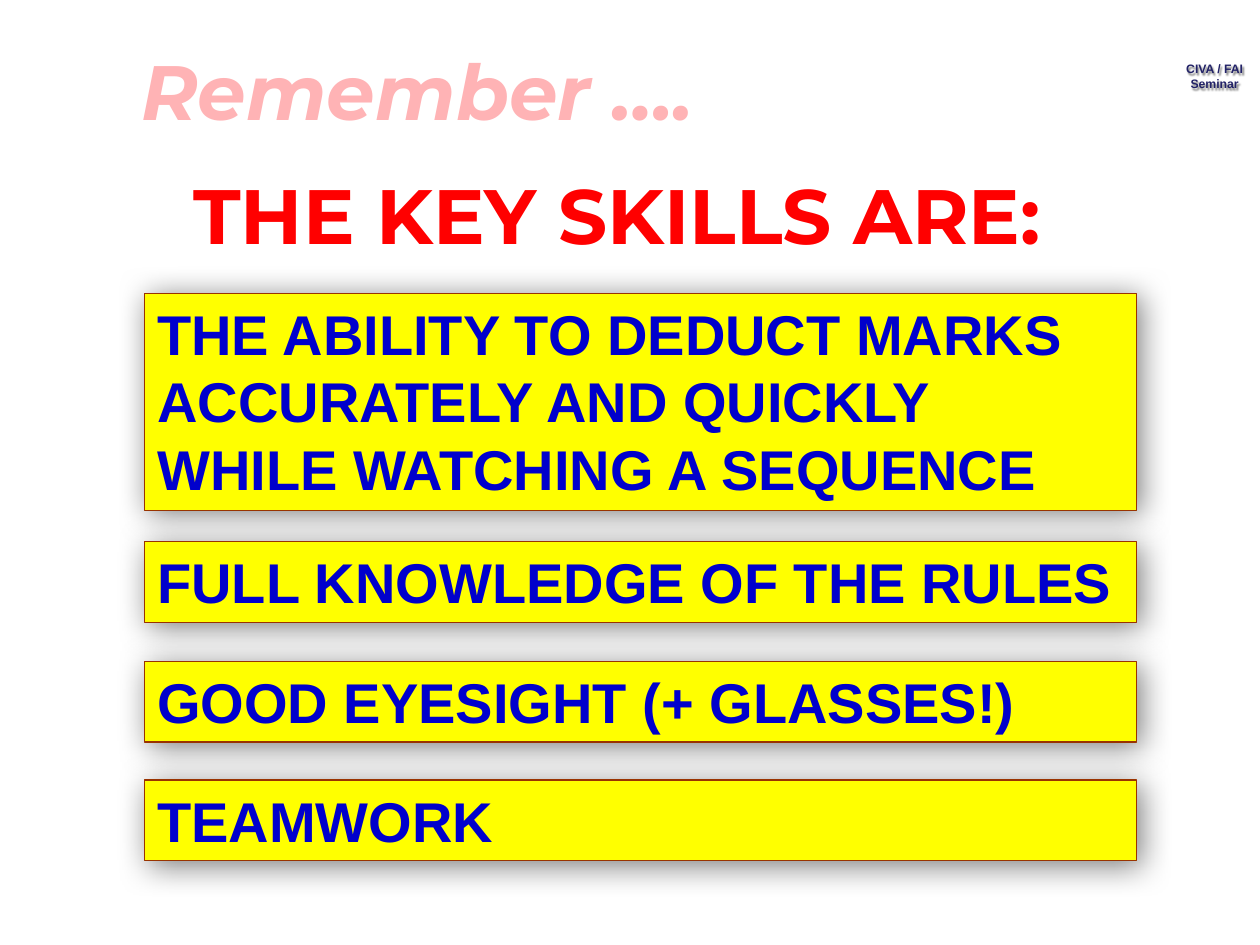
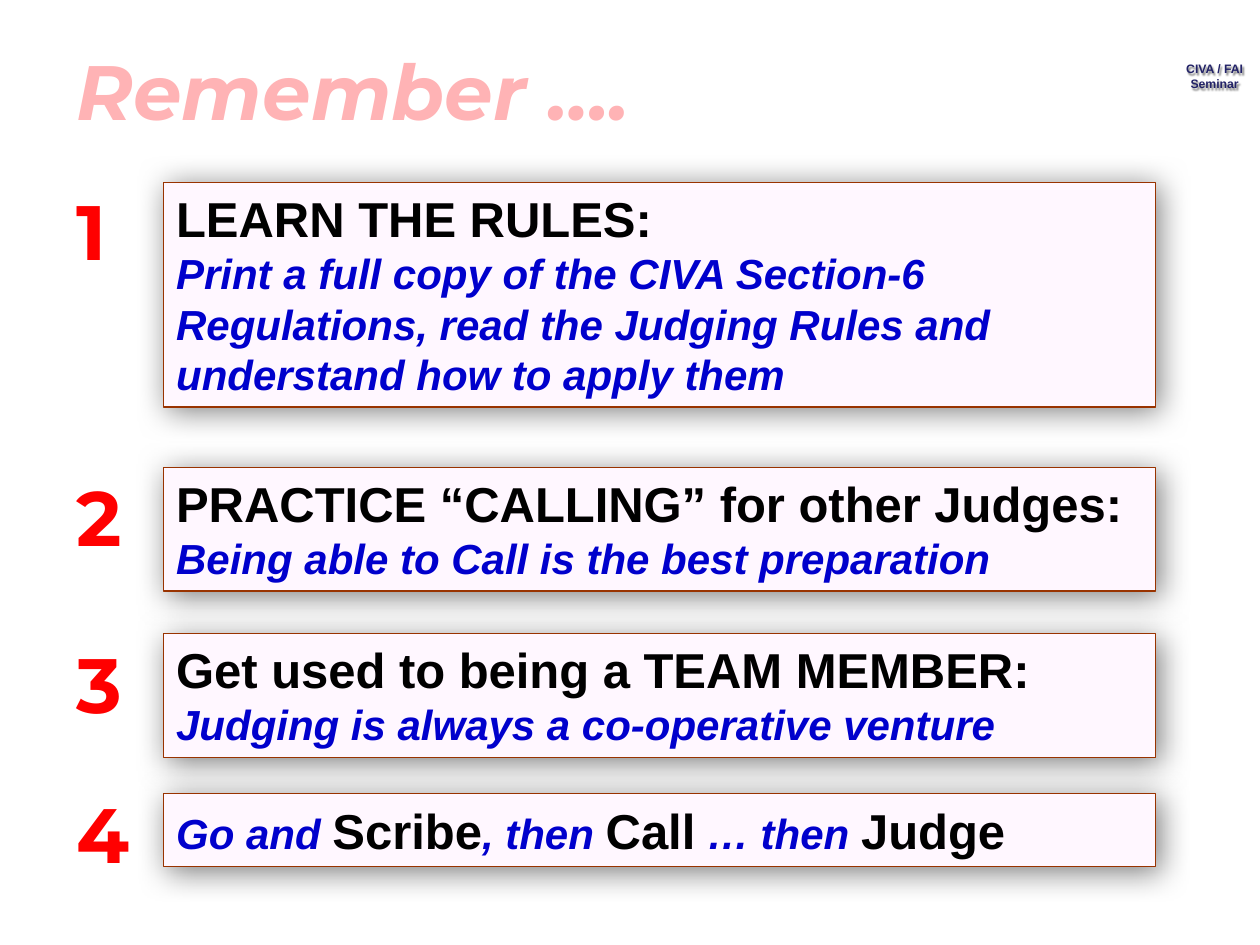
from lxml import etree
from pptx import Presentation, util as u
from pptx.dml import color as col
from pptx.enum import shapes, text
from pptx.oxml import ns

RED, PINK, BLUE, NAVY, BLACK = "FF0000", "FFB3B5", "0000CC", "222267", "000000"
YELLOW, PALE, BROWN = "FFFF00", "FFF7FF", "993300"

TITLE = dict(size=44, name="Montserrat", color=PINK, bold=True, italic=True)
BIG = dict(TITLE, color=RED, italic=False)
SKILL = dict(size=32, name="Arial", color=BLUE, bold=True, italic=False)
HEAD = dict(SKILL, size=28, color=BLACK)
NOTE = dict(SKILL, size=24, italic=True)
MARK = dict(SKILL, size=7, color=NAVY)

WIDTH = 7.87
SKILLS = [
    (2.33, 1.72, "THE ABILITY TO DEDUCT MARKS ACCURATELY AND QUICKLY WHILE WATCHING A SEQUENCE"),
    (4.3, 0.64, "FULL KNOWLEDGE OF THE RULES"),
    (5.25, 0.64, "GOOD EYESIGHT (+ GLASSES!)"),
    (6.19, 0.64, "TEAMWORK"),
]
STEPS = [
    (1.45, 1.78, 1.45, [
        ("LEARN THE RULES:", HEAD), None,
        ("Print a full copy of the CIVA Section-6 Regulations, read the Judging Rules "
         "and understand how to apply them", NOTE)]),
    (3.71, 0.98, 3.72, [
        ("PRACTICE “CALLING” for other Judges:", HEAD), None,
        ("Being able to Call is the best preparation", NOTE)]),
    (5.03, 0.98, 5.04, [
        ("Get used to being a TEAM MEMBER:", HEAD), None,
        ("Judging is always a co-operative venture", NOTE)]),
    (6.3, 0.58, 6.23, [
        ("Go and ", NOTE), ("Scribe", HEAD), (", then ", NOTE), ("Call", HEAD),
        (" … then ", NOTE), ("Judge", HEAD)]),
]


def paint(part, code):
    """Set a solid colour on a fill or a colour format from a hex string."""
    if hasattr(part, "solid"):
        part.solid()
        part = part.fore_color
    part.rgb = col.RGBColor.from_string(code)


def write(shape, lines, anchor="TOP", align="LEFT", wrap=True):
    """Fill a shape with lines of styled runs; None in a line breaks it."""
    frame = shape.text_frame
    frame.word_wrap = wrap
    frame.auto_size = text.MSO_AUTO_SIZE.NONE
    frame.vertical_anchor = text.MSO_ANCHOR[anchor]
    for i, runs in enumerate(lines):
        para = frame.add_paragraph() if i else frame.paragraphs[0]
        para.alignment = text.PP_ALIGN[align]
        for item in runs:
            if item is None:
                para.add_line_break()
                continue
            run = para.add_run()
            run.text, style = item
            for key, val in style.items():
                if key == "color":
                    paint(run.font.color, val)
                else:
                    setattr(run.font, key, u.Pt(val) if key == "size" else val)


def shade(shape, code, blur, dist):
    """Give a shape a soft shadow down to the right."""
    shape.shadow.inherit = False
    glow = shape.element.spPr.find(ns.qn("a:effectLst"))
    outer = etree.SubElement(glow, ns.qn("a:outerShdw"), blurRad=str(u.Pt(blur)),
                             dist=str(u.Pt(dist)), dir="2700000", algn="ctr", rotWithShape="0")
    etree.SubElement(outer, ns.qn("a:srgbClr"), val=code)


def label(slide, box, lines, **form):
    """Add a text box."""
    shape = slide.shapes.add_textbox(*map(u.Inches, box))
    write(shape, lines, **form)
    return shape


def panel(slide, box, fill, runs):
    """Add a framed, shadowed rectangle with text."""
    shape = slide.shapes.add_shape(shapes.MSO_SHAPE.RECTANGLE, *map(u.Inches, box))
    paint(shape.fill, fill)
    paint(shape.line.fill, BROWN)
    shape.line.width = u.Pt(0.75)
    shade(shape, "808080", 18, 2.8)
    write(shape, [runs])


def start(deck, left):
    """Add a slide with its title at the given left edge."""
    slide = deck.slides.add_slide(deck.slide_layouts[5])
    title = slide.shapes.title
    box = dict(left=left, top=0.36, width=5.43, height=0.71)
    for key, val in box.items():
        setattr(title, key, u.Inches(val))
    write(title, [[("Remember ….", TITLE)]], anchor="MIDDLE")
    return slide


def brand(slide):
    """Put the seminar mark on the layout that all slides share."""
    mark = label(slide, (9.3, 0.44, 0.68, 0.34),
                 [[("CIVA / FAI", MARK)], [("Seminar", MARK)]], align="CENTER", wrap=False)
    shade(mark, "808080", 1, 1.5)
    mark.element.xpath(".//p:cNvPr")[0].set("id", "20")
    slide.slide_layout.shapes.element.append(mark.element)


def skills(slide, left):
    """Place the heading and the yellow skill panels."""
    label(slide, (0.4, 1.23, 9, 0.94), [[("THE KEY SKILLS ARE:", BIG)]],
          anchor="MIDDLE", align="CENTER")
    for top, high, words in SKILLS:
        panel(slide, (left, top, WIDTH, high), YELLOW, [(words, SKILL)])


def steps(slide, left):
    """Place the numbered advice panels."""
    for num, (top, high, mid, runs) in enumerate(STEPS, 1):
        panel(slide, (left, top, WIDTH, high), PALE, runs)
        label(slide, (left - 0.79, mid, 0.63, 0.75), [[(str(num), BIG)]], anchor="MIDDLE")


def main():
    """Build both slides and save the deck."""
    deck = Presentation()
    deck.slide_width, deck.slide_height = u.Inches(10), u.Inches(7.5)
    first = start(deck, 1.02)
    brand(first)
    skills(first, 1.15)
    steps(start(deck, 0.51), 1.3)
    deck.save("out.pptx")


if __name__ == "__main__":
    main()
